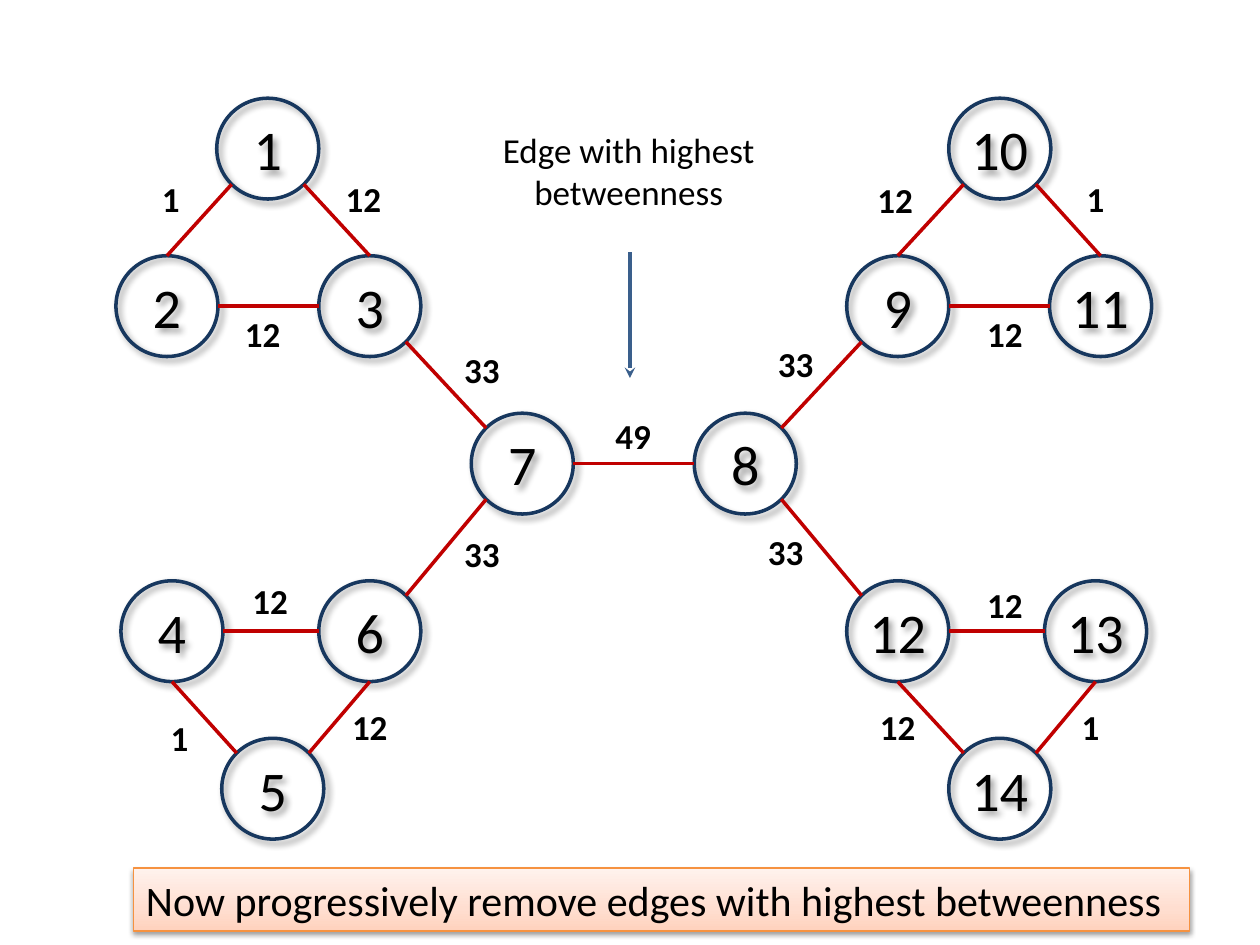
from copy import deepcopy
from math import cos, radians, sin

from lxml.etree import SubElement
from pptx import Presentation
from pptx.dml.color import RGBColor
from pptx.enum.shapes import MSO_CONNECTOR, MSO_SHAPE
from pptx.enum.text import MSO_ANCHOR, MSO_AUTO_SIZE, PP_ALIGN
from pptx.oxml import parse_xml
from pptx.oxml.ns import nsdecls, qn
from pptx.util import Inches, Pt

LEFT, RIGHT, TOP, BOTTOM = 180, 0, 270, 90
TOP_LEFT, TOP_RIGHT, BOTTOM_LEFT, BOTTOM_RIGHT = 225, 315, 135, 45
NODE_W, NODE_H = 0.81, 0.8
ROWS = [0.78, 2.03, 3.28, 4.61, 5.86]
COLS = [0.92, 1.72, 2.53, 3.74, 5.51, 6.72, 7.53, 8.33]
NUDGE = 0.04  # the lower triangles sit slightly closer to the middle


def write(sp, text, size, align=PP_ALIGN.CENTER, bold=False):
    p = sp.text_frame.paragraphs[0]
    p.text = text
    p.alignment = align
    p.font.name, p.font.size, p.font.bold = "Calibri", Pt(size), bold
    p.font.color.rgb = RGBColor.from_string("000000")


def add_shadow(sp, opacity, blur, dist, angle):
    sp.shadow.inherit = False
    sp._element.spPr.find(qn("a:effectLst")).append(parse_xml(
        f'<a:outerShdw {nsdecls("a")} blurRad="{Pt(blur)}" dist="{Pt(dist)}" '
        f'dir="{angle * 60000}" rotWithShape="0"><a:srgbClr val="000000">'
        f'<a:alpha val="{opacity * 1000}"/></a:srgbClr></a:outerShdw>'))


prs = Presentation()
prs.slide_width, prs.slide_height = Inches(10), Inches(7.5)
s = prs.slides.add_slide(prs.slide_layouts[6])

# Nodes: number -> left, top
nodes = {
    1: (COLS[1], ROWS[0]), 2: (COLS[0], ROWS[1]), 3: (COLS[2], ROWS[1]),
    4: (COLS[0] + NUDGE, ROWS[3]), 5: (COLS[1] + NUDGE, ROWS[4]), 6: (COLS[2], ROWS[3]),
    7: (COLS[3], ROWS[2]), 8: (COLS[4], ROWS[2]),
    9: (COLS[5], ROWS[1]), 10: (COLS[6], ROWS[0]), 11: (COLS[7], ROWS[1]),
    12: (COLS[5], ROWS[3]), 13: (COLS[7] - NUDGE, ROWS[3]), 14: (COLS[6], ROWS[4]),
}
for number, (x, y) in nodes.items():
    sp = s.shapes.add_shape(MSO_SHAPE.OVAL, Inches(x), Inches(y), Inches(NODE_W), Inches(NODE_H))
    sp.fill.background()
    sp.line.color.rgb = RGBColor.from_string("17375E")
    sp.line.width = Pt(2)
    add_shadow(sp, 40, 4, 3, 45)
    if number > 9:
        sp.text_frame.margin_left = sp.text_frame.margin_right = 0
    write(sp, str(number), 32)

# Edges: node, side, node, side, betweenness, label left, label top
edges = [
    (1, TOP_LEFT + 270, 2, TOP, 1, 1.03, 1.36),
    (3, TOP, 1, BOTTOM_RIGHT, 12, 2.56, 1.36),
    (3, LEFT, 2, RIGHT, 12, 1.76, 2.43),
    (10, BOTTOM_LEFT, 9, TOP, 12, 6.78, 1.37),
    (11, TOP, 10, BOTTOM_RIGHT, 1, 8.37, 1.36),
    (11, LEFT, 9, RIGHT, 12, 7.65, 2.43),
    (5, TOP_LEFT, 4, BOTTOM, 1, 1.1, 5.64),
    (6, BOTTOM, 5, TOP_RIGHT, 12, 2.61, 5.55),
    (6, LEFT, 4, RIGHT, 12, 1.82, 4.55),
    (14, TOP_LEFT, 12, BOTTOM, 12, 6.8, 5.55),
    (13, BOTTOM, 14, TOP_RIGHT, 1, 8.33, 5.55),
    (13, LEFT, 12, RIGHT, 12, 7.65, 4.58),
    (7, TOP_LEFT, 3, BOTTOM_RIGHT, 33, 3.5, 2.72),
    (7, BOTTOM_LEFT, 6, TOP_RIGHT, 33, 3.5, 4.18),
    (8, LEFT, 7, RIGHT, 49, 4.7, 3.24),
    (8, TOP_RIGHT, 9, BOTTOM_LEFT, 33, 5.99, 2.67),
    (12, TOP_LEFT, 8, BOTTOM_RIGHT, 33, 5.91, 4.16),
]
edges[0] = (1, BOTTOM_LEFT) + edges[0][2:]
labels = [("Edge with highest betweenness", 3.4, 0.97, 3.18, 0.77, False)]
for start, start_side, end, end_side, weight, x, y in edges:
    ends = []
    for node, side in ((start, start_side), (end, end_side)):
        left, top = nodes[node]
        ends += [Inches(left + NODE_W / 2 * (1 + cos(radians(side)))),
                 Inches(top + NODE_H / 2 * (1 + sin(radians(side))))]
    edge = s.shapes.add_connector(MSO_CONNECTOR.STRAIGHT, *ends)
    edge.line.color.rgb = RGBColor.from_string("C00000")
    edge.line.width = Pt(2)
    SubElement(edge._element.spPr, qn("a:effectLst"))
    labels.append((str(weight), x, y, 0.65, 0.44, True))

for text, x, y, w, h, bold in labels:
    sp = s.shapes.add_textbox(Inches(x), Inches(y), Inches(w), Inches(h))
    sp.text_frame.word_wrap = True
    sp.text_frame.auto_size = MSO_AUTO_SIZE.SHAPE_TO_FIT_TEXT
    write(sp, text, 20, bold=bold)

# Curved pointer: each three points after the first form one Bezier segment
curve = [(5.13, 3.15),
         (5.13, 3.16), (5.14, 3.16), (5.17, 3.05),
         (5.19, 2.95), (5.29, 2.62), (5.26, 2.52),
         (5.23, 2.41), (5.02, 2.54), (4.98, 2.42),
         (4.93, 2.3), (4.96, 2.05), (4.99, 1.8)]
builder = s.shapes.build_freeform(*curve[0], scale=Inches(1))
builder.add_line_segments(curve[1:], close=False)
pointer = builder.convert_to_shape()
pointer.fill.background()
pointer.line.color.rgb = RGBColor.from_string("3A5F8C")
pointer.line.width = Pt(2)
pointer.shadow.inherit = False
SubElement(pointer.line._get_or_add_ln(), qn("a:headEnd"), type="stealth")
segments = list(pointer._element.iter(qn("a:lnTo")))
outline = segments[0].getparent()
for i in range(0, len(segments), 3):
    bezier = SubElement(outline, qn("a:cubicBezTo"))
    for segment in segments[i:i + 3]:
        bezier.append(segment[0])
        outline.remove(segment)

# Caption bar
bar = s.shapes.add_shape(MSO_SHAPE.RECTANGLE, Inches(1.06), Inches(6.89), Inches(8.38), Inches(0.5))
bar.fill.gradient()
bar.fill.gradient_angle = 90
first_stop = next(bar._element.iter(qn("a:gs")))
first_stop.addnext(deepcopy(first_stop))
for stop, (position, color) in zip(bar.fill.gradient_stops,
                                   [(0, "FFD2BD"), (0.35, "FFDED0"), (1, "FFF2ED")]):
    stop.position = position
    stop.color.rgb = RGBColor.from_string(color)
bar.line.color.rgb = RGBColor.from_string("F69240")
bar.line.width = Pt(0.75)
add_shadow(bar, 38, 3.1, 1.6, 90)
tf = bar.text_frame
tf.word_wrap = False
tf.auto_size = MSO_AUTO_SIZE.SHAPE_TO_FIT_TEXT
tf.vertical_anchor = MSO_ANCHOR.TOP
write(bar, "Now progressively remove edges with highest betweenness", 24, PP_ALIGN.LEFT)

prs.save("out.pptx")
